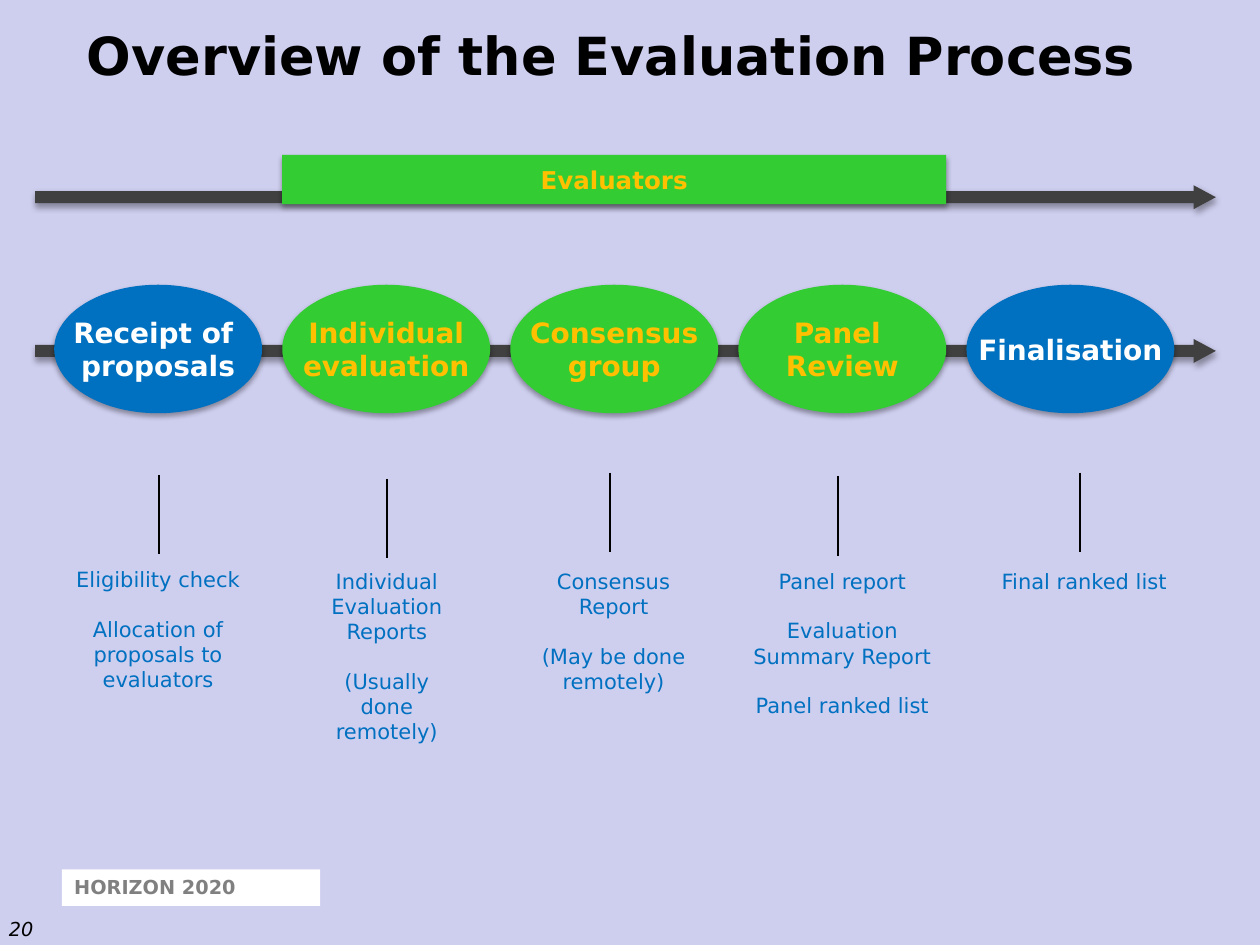
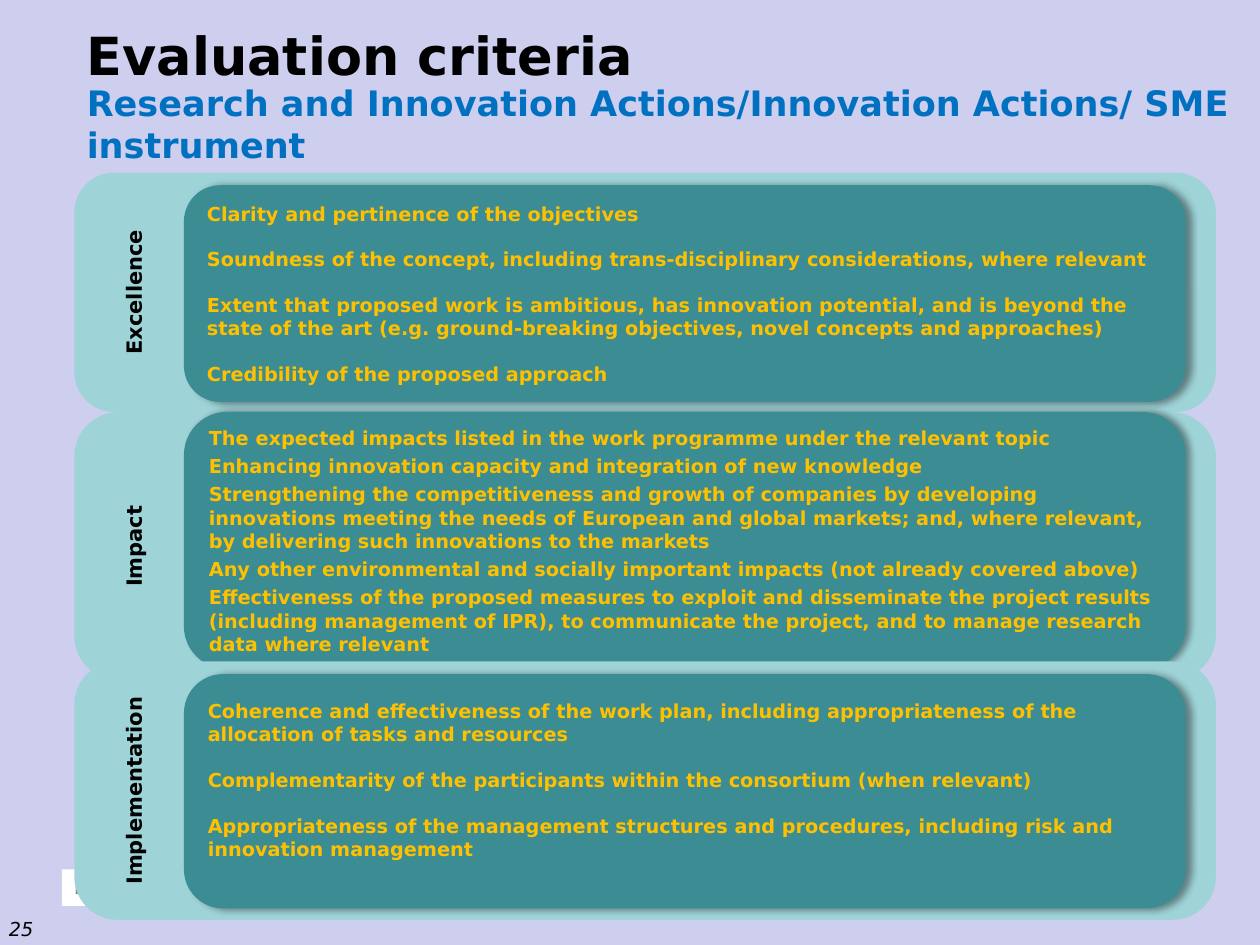
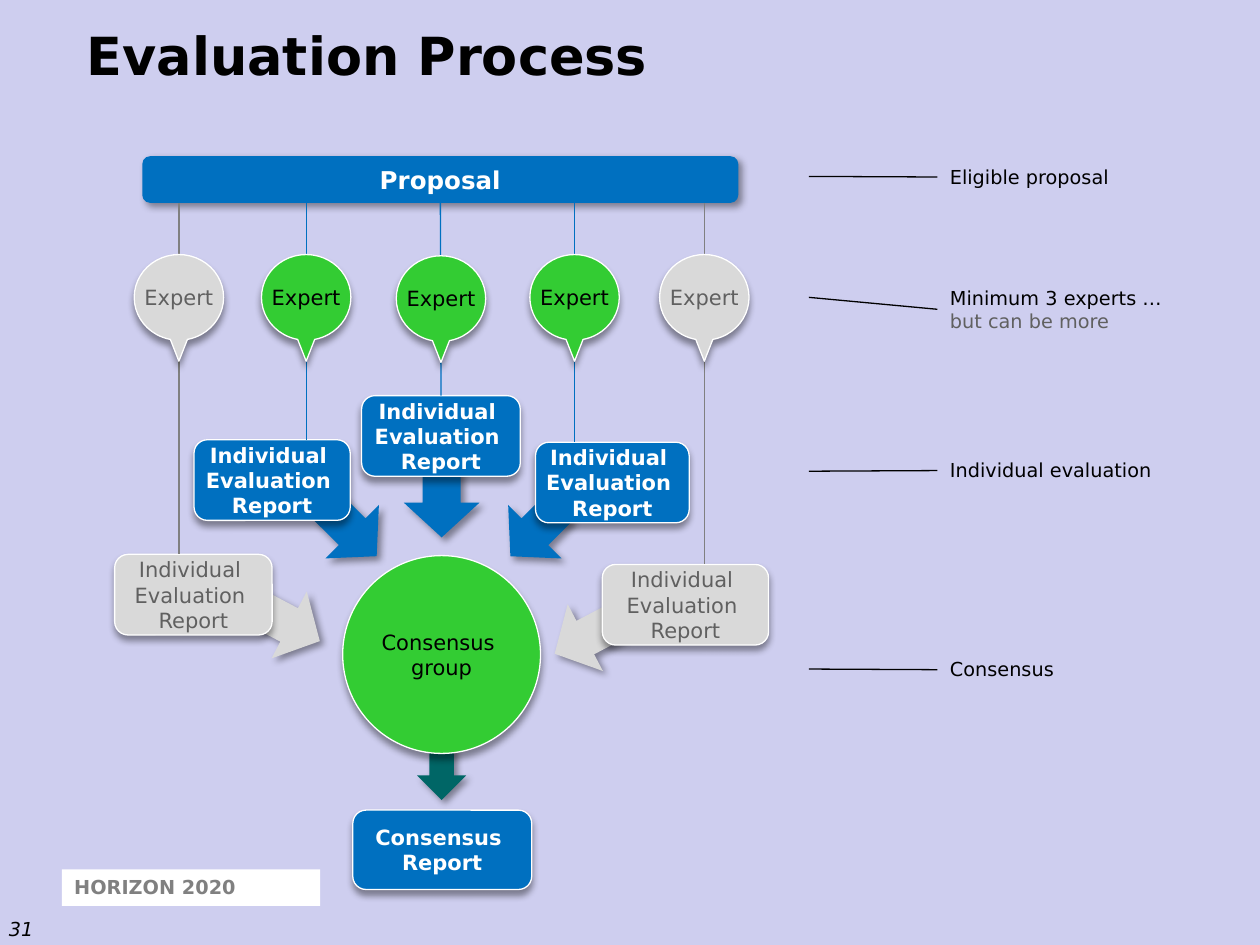
import pptx
import pptx.dml.color
import pptx.enum.shapes
import pptx.enum.text
import pptx.oxml
import pptx.oxml.ns
import pptx.util
from lxml import etree

SHAPE = pptx.enum.shapes.MSO_SHAPE
ALIGN = pptx.enum.text.PP_ALIGN
ANCHOR = pptx.enum.text.MSO_ANCHOR
Pt = pptx.util.Pt

FONT = "DejaVu Sans"
COLUMNS, ROWS = 100, 75
LAVENDER, BLACK, WHITE = "CECEEF", "000000", "FFFFFF"
BLUE, GREEN, GOLD = "0070C0", "33CC33", "FFC000"
CHARCOAL, GREY, DIM, PALE = "404040", "808080", "606060", "D9D9D9"
AQUA, TEAL, DEEP_TEAL = "9ED3D7", "3C8C93", "006666"

# Shadows: opacity in percent, blur and distance in points, angle in degrees
SOFT = (35, 3.1, 1.8, 90)
DOWN = (40, 4, 3, 90)
DIAGONAL = (40, 4, 3, 45)
SIDEWAYS = (40, 4, 3, 0)


def rgb(colour):
    return pptx.dml.color.RGBColor.from_string(colour)


class Deck:
    """Holds the shared style and the current slide; lengths are grid columns and rows."""

    def __init__(self):
        self.prs = pptx.Presentation()
        self.prs.slide_width = pptx.util.Inches(10)
        self.prs.slide_height = pptx.util.Inches(7.5)
        background = self.prs.slide_master.background.fill
        background.solid()
        background.fore_color.rgb = rgb(LAVENDER)
        self.slide = None

    def col(self, count):
        return round(self.prs.slide_width * count / COLUMNS)

    def row(self, count):
        return round(self.prs.slide_height * count / ROWS)

    def area(self, left, top, width, height):
        return self.col(left), self.row(top), self.col(width), self.row(height)

    def new_slide(self, heading, number):
        self.slide = self.prs.slides.add_slide(self.prs.slide_layouts[5])
        title = self.slide.shapes.title
        title.left, title.top, title.width, title.height = self.area(5.9, 1.3, 90, 10.2)
        self.fill_text(title, [heading], 30, BLACK, bold=True)
        programme = self.shape(SHAPE.RECTANGLE, (4.9, 69, 20.5, 2.9), WHITE)
        self.fill_text(programme, ["HORIZON 2020"], 11, GREY, bold=True)
        page = self.text((0, 71.1, 4.9, 4), [str(number)], 11, BLACK,
                         italic=True, anchor=ANCHOR.BOTTOM)
        page.text_frame.margin_left = self.col(0.7)

    def fill_text(self, holder, blocks, size, colour, bold=False, italic=False,
                  align=ALIGN.LEFT, anchor=ANCHOR.TOP, wrap=True, gap=0):
        """Fill holder with blocks of lines, with gap points between blocks."""
        frame = holder.text_frame
        frame.auto_size = pptx.enum.text.MSO_AUTO_SIZE.NONE
        frame.word_wrap = wrap
        frame.vertical_anchor = anchor
        paragraph = None
        for block in blocks:
            for index, line in enumerate(block.split("\n")):
                is_first = paragraph is None
                paragraph = frame.paragraphs[0] if is_first else frame.add_paragraph()
                paragraph.text = line
                paragraph.alignment = align
                paragraph.space_before = Pt(0 if is_first or index else gap)
                font = paragraph.font
                font.name, font.size = FONT, Pt(size)
                font.bold, font.italic = bold, italic
                font.color.rgb = rgb(colour)

    def centre(self, holder, blocks, size, colour, **style):
        self.fill_text(holder, blocks, size, colour, align=ALIGN.CENTER,
                       anchor=ANCHOR.MIDDLE, **style)

    def text(self, place, blocks, size, colour, **style):
        box = self.slide.shapes.add_textbox(*self.area(*place))
        self.fill_text(box, blocks, size, colour, **style)
        return box

    def shape(self, kind, place, fill, outline=None, shadow=None, turn=0, adjust=()):
        shape = self.slide.shapes.add_shape(kind, *self.area(*place))
        shape.fill.solid()
        shape.fill.fore_color.rgb = rgb(fill)
        if outline:
            shape.line.color.rgb = rgb(outline)
            shape.line.width = Pt(0.75)
        else:
            shape.line.fill.background()
        shape.rotation = turn
        for index, value in enumerate(adjust):
            shape.adjustments[index] = value
        shape.shadow.inherit = False
        if shadow:
            self.cast_shadow(shape, *shadow)
        return shape

    def cast_shadow(self, shape, opacity, blur, distance, angle):
        effects = shape._element.spPr.find(pptx.oxml.ns.qn("a:effectLst"))
        effects.append(pptx.oxml.parse_xml(
            f'<a:outerShdw {pptx.oxml.ns.nsdecls("a")} blurRad="{Pt(blur)}" '
            f'dist="{Pt(distance)}" dir="{angle * 60000}" rotWithShape="0">'
            f'<a:srgbClr val="{BLACK}"><a:alpha val="{opacity * 1000}"/></a:srgbClr>'
            '</a:outerShdw>'))

    def line(self, start, end, colour=BLACK, width=0.75):
        line = self.slide.shapes.add_connector(
            pptx.enum.shapes.MSO_CONNECTOR.STRAIGHT,
            self.col(start[0]), self.row(start[1]), self.col(end[0]), self.row(end[1]))
        line.line.color.rgb = rgb(colour)
        line.line.width = Pt(width)
        etree.SubElement(line._element.spPr, pptx.oxml.ns.qn("a:effectLst"))
        return line


def overview(deck):
    deck.new_slide("Overview of the Evaluation Process", 20)
    for top in (14.7, 26.9):
        deck.shape(SHAPE.RIGHT_ARROW, (2.8, top, 93.7, 1.9), CHARCOAL,
                   shadow=SOFT, adjust=(0.5, 0.93))
    # Stage name, fill, ink, tick (x, top), results (left, top, width), results text
    stages = [
        ("Receipt of \nproposals", BLUE, WHITE, (12.6, 37.7), (4.3, 44.5, 16.5),
         ["Eligibility check", "Allocation of proposals to evaluators"]),
        ("Individual\nevaluation", GREEN, GOLD, (30.7, 38), (24.8, 44.6, 11.8),
         ["Individual\nEvaluation\nReports", "(Usually done remotely)"]),
        ("Consensus\ngroup", GREEN, GOLD, (48.4, 37.5), (41.2, 44.6, 15),
         ["Consensus\nReport", "(May be done\nremotely)"]),
        ("Panel \nReview", GREEN, GOLD, (66.5, 37.8), (57.6, 44.6, 18.5),
         ["Panel report", "Evaluation Summary Report", "Panel ranked list"]),
        ("Finalisation", BLUE, WHITE, (85.7, 37.5), (76.8, 44.6, 18.5),
         ["Final ranked list"]),
    ]
    for index, (name, fill, ink, tick, results, outcome) in enumerate(stages):
        stage = deck.shape(SHAPE.OVAL, (4.3 + 18.1 * index, 22.6, 16.5, 10.2),
                           fill, shadow=SOFT)
        frame = stage.text_frame
        frame.margin_left = frame.margin_right = frame.margin_top = frame.margin_bottom = 0
        deck.centre(stage, [name], 16, ink, bold=True, wrap=False)
        x, top = tick
        deck.line((x, top), (x, top + 6.3), width=1)
        deck.text((*results, 17.2), outcome, 12, BLUE, align=ALIGN.CENTER, gap=14)
    evaluators = deck.shape(SHAPE.RECTANGLE, (22.4, 12.3, 52.7, 3.9), GREEN, shadow=SOFT)
    deck.centre(evaluators, ["Evaluators"], 14, GOLD, bold=True)


def criteria(deck):
    deck.new_slide("Evaluation criteria", 25)
    deck.text((5.9, 6, 92.9, 7.7),
              ["Research and Innovation Actions/Innovation Actions/ SME instrument"],
              20, BLUE, bold=True)
    # Criterion, band (top, height), panel (top, height), gap, bottom margin, aspects
    bands = [
        ("Excellence", (13.7, 19), (14.7, 17.2), 12.8, 0.5, [
            "Clarity and pertinence of the objectives",
            "Soundness of the concept, including trans-disciplinary considerations, "
            "where relevant",
            "Extent that proposed work is ambitious, has innovation potential, and is "
            "beyond the state of the art (e.g. ground-breaking objectives, novel "
            "concepts and approaches)",
            "Credibility of the proposed approach"]),
        ("Impact", (32.7, 21.3), (32.7, 20.4), 3, 0.5, [
            "The expected impacts listed in the work programme under the relevant topic",
            "Enhancing innovation capacity and integration of new knowledge",
            "Strengthening the competitiveness and growth of companies by developing "
            "innovations meeting the needs of European and global markets; and, where "
            "relevant, by delivering such innovations to the markets",
            "Any other environmental and socially important impacts (not already "
            "covered above)",
            "Effectiveness of the proposed measures to exploit and disseminate the "
            "project results (including management of IPR), to communicate the project, "
            "and to manage research data where relevant"]),
        ("Implementation", (52.5, 20.5), (53.5, 18.6), 12.8, 2.3, [
            "Coherence and effectiveness of the work plan, including appropriateness of "
            "the allocation of tasks and resources",
            "Complementarity of the participants within the consortium (when relevant)",
            "Appropriateness of the management structures and procedures, including "
            "risk and innovation management"]),
    ]
    for criterion, (top, height), (panel_top, panel_height), gap, margin, aspects in bands:
        deck.shape(SHAPE.ROUNDED_RECTANGLE, (5.9, top, 90.6, height), AQUA)
        panel = deck.shape(SHAPE.ROUNDED_RECTANGLE, (14.6, panel_top, 79.5, panel_height),
                           TEAL, shadow=SIDEWAYS)
        deck.fill_text(panel, aspects, 11, GOLD, bold=True, anchor=ANCHOR.MIDDLE, gap=gap)
        panel.text_frame.margin_bottom = deck.row(margin)
        label = deck.text((9.1, top, 3.9, height), [criterion], 12, BLACK,
                          bold=True, align=ALIGN.CENTER, wrap=False)
        label._element.txBody.bodyPr.set("vert", "vert270")


def process(deck):
    deck.new_slide("Evaluation Process", 31)
    proposal = deck.shape(SHAPE.ROUNDED_RECTANGLE, (11.3, 12.4, 47.3, 3.7), BLUE,
                          shadow=DIAGONAL)
    deck.centre(proposal, ["Proposal"], 14, WHITE, bold=True)
    deck.shape(SHAPE.RIGHT_ARROW, (32.3, 58.8, 5.5, 3.9), DEEP_TEAL,
               shadow=DIAGONAL, turn=90)

    # Expert centre, top; report place; arrow left, top, turn; required
    tracks = [
        (14.2, 20.2, (9.1, 44, 12.5, 6.4), (20.2, 46.6, 27.8), False),
        (24.3, 20.2, (15.4, 34.9, 12.4, 6.4), (25.2, 39.2, 45), True),
        (35, 20.3, (28.7, 31.4, 12.6, 6.4), (32.3, 36.9, 90), True),
        (45.6, 20.2, (42.5, 35.1, 12.2, 6.4), (39.7, 39.2, 135), True),
        (55.9, 20.2, (47.8, 44.8, 13.2, 6.4), (43.7, 47.6, 152.2), False),
    ]
    for centre, expert_top, place, (arrow_left, arrow_top, turn), required in tracks:
        fill, ink = (BLUE, WHITE) if required else (PALE, DIM)
        deck.shape(SHAPE.RIGHT_ARROW, (arrow_left, arrow_top, 5.5, 6), fill,
                   shadow=DIAGONAL, turn=turn)
        report = deck.shape(SHAPE.ROUNDED_RECTANGLE, place, fill, WHITE, DOWN)
        deck.centre(report, ["Individual \nEvaluation \nReport"], 12, ink,
                    bold=required, wrap=False)
        thread = deck.line((centre, 16.1), (centre, place[1]), BLUE if required else GREY)
        if centre == 35:
            thread.begin_connect(proposal, 2)
            thread.end_connect(report, 0)
        expert = deck.shape(SHAPE.OVAL_CALLOUT, (centre - 3.55, expert_top, 7.1, 6.8),
                            GREEN if required else PALE, WHITE, DOWN, adjust=(0, 0.745))
        deck.centre(expert, ["Expert"], 12, BLACK if required else DIM, wrap=False)

    group = deck.shape(SHAPE.OVAL, (27.2, 44.1, 15.7, 15.7), GREEN, WHITE, DOWN)
    deck.centre(group, ["Consensus \ngroup"], 12, BLACK, wrap=False)
    outcome = deck.shape(SHAPE.ROUNDED_RECTANGLE, (28, 64.3, 14.2, 6.3), BLUE, WHITE, DOWN)
    deck.centre(outcome, ["Consensus \nReport"], 12, WHITE, bold=True, wrap=False)

    # Step, top, height, pointer end
    steps = [
        ("Eligible proposal", 12.6, 2.9, 14),
        ("Minimum 3 experts … ", 22.2, 4.7, 23.6),
        ("Individual evaluation", 35.9, 2.9, 37.4),
        ("Consensus", 51.7, 2.9, 53.1),
    ]
    for step, top, height, pointer_end in steps:
        label = deck.text((74.4, top, 18.9, height), [step], 11, BLACK)
        if step.startswith("Minimum"):
            extra = label.text_frame.paragraphs[0].add_run()
            extra.text = "but can be more"
            extra.font.name, extra.font.size = FONT, Pt(11)
            extra.font.color.rgb = rgb(DIM)
        pointer = deck.line((74.4, top + height / 2), (64.2, pointer_end))
        pointer.begin_connect(label, 1)


def main():
    deck = Deck()
    overview(deck)
    criteria(deck)
    process(deck)
    deck.prs.save("out.pptx")


if __name__ == "__main__":
    main()
